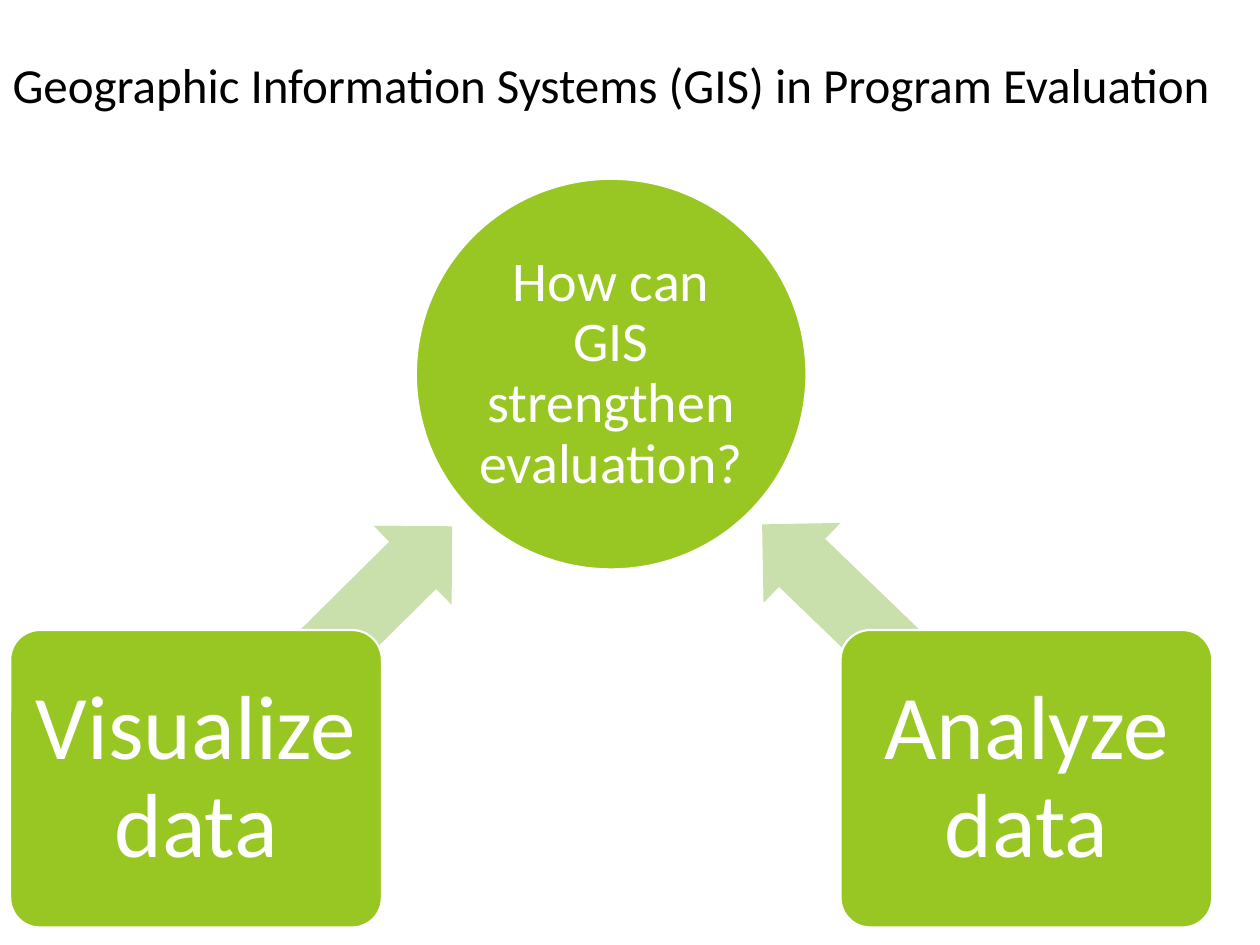
from dataclasses import dataclass

from pptx import Presentation
from pptx.dml.color import RGBColor
from pptx.enum.shapes import MSO_SHAPE
from pptx.enum.text import MSO_ANCHOR, MSO_AUTO_SIZE, PP_ALIGN
from pptx.util import Pt

ELLIPSE, ROUNDED = MSO_SHAPE.OVAL, MSO_SHAPE.ROUNDED_RECTANGLE
ARROW = MSO_SHAPE.LEFT_ARROW
LEFT, CENTER = PP_ALIGN.LEFT, PP_ALIGN.CENTER
MIDDLE, NO_FIT = MSO_ANCHOR.MIDDLE, MSO_AUTO_SIZE.NONE
TITLE_ONLY = 5


@dataclass(frozen=True)
class Theme:
    font: str = "Calibri"
    black: RGBColor = RGBColor(0x00, 0x00, 0x00)
    white: RGBColor = RGBColor(0xFF, 0xFF, 0xFF)
    green: RGBColor = RGBColor(0x98, 0xC7, 0x23)
    pale_green: RGBColor = RGBColor(0xCA, 0xE0, 0xAC)
    title_size: int = 28
    question_size: int = 32
    answer_size: int = 52
    outline: float = 1.25


THEME = Theme()


def set_text(sp, text, *, size, color, align=CENTER, spacing=None, inset=None):
    """Fill the shape's text frame with one formatted paragraph."""
    tf = sp.text_frame
    tf.word_wrap = True
    tf.auto_size = NO_FIT
    tf.vertical_anchor = MIDDLE
    if inset is not None:
        tf.margin_left = tf.margin_right = Pt(inset)
        tf.margin_top = tf.margin_bottom = Pt(inset)
    p = tf.paragraphs[0]
    p.alignment = align
    p.line_spacing = spacing
    r = p.add_run()
    r.text = text
    r.font.name = THEME.font
    r.font.size = Pt(size)
    r.font.color.rgb = color


def add_filled(s, kind, box, fill):
    sp = s.shapes.add_shape(kind, *map(Pt, box))
    sp.shadow.inherit = False
    sp.fill.solid()
    sp.fill.fore_color.rgb = fill
    sp.line.fill.background()
    return sp


def add_title(s, box, text):
    sp = s.shapes.title
    sp.left, sp.top, sp.width, sp.height = map(Pt, box)
    set_text(sp, text, size=THEME.title_size, color=THEME.black, align=LEFT)


def add_node(s, kind, box, text, *, size, inset):
    """Green outlined shape with white centred text."""
    sp = add_filled(s, kind, box, THEME.green)
    sp.line.color.rgb = THEME.white
    sp.line.width = Pt(THEME.outline)
    if kind == ROUNDED:
        sp.adjustments[0] = 0.1
    set_text(sp, text, size=size, color=THEME.white, spacing=0.9, inset=inset)


def add_arrow(s, box, angle):
    sp = add_filled(s, ARROW, box, THEME.pale_green)
    sp.adjustments[0], sp.adjustments[1] = 0.6, 0.5
    sp.rotation = angle


def add_diagram(s, box):
    """Question circle at top centre, answers in the bottom corners."""
    x, y, w, h = box
    circle = 223.2
    answer_w, answer_h = 212.4, 170
    add_node(s, ELLIPSE, (x + (w - circle) / 2, y, circle, circle),
             "How can GIS strengthen evaluation?",
             size=THEME.question_size, inset=1.5)

    # Each answer covers the tail of its arrow
    answers = [
        ("Visualize data", x, (x + 77, y + 239, 205.2, 63.4), 135.3),
        ("Analyze data", x + w - answer_w, (x + 400.4, y + 238.4, 209.5, 63.4), 43.9),
    ]
    for text, left, arrow_box, angle in answers:
        add_arrow(s, arrow_box, angle)
        add_node(s, ROUNDED, (left, y + h - answer_h, answer_w, answer_h),
                 text, size=THEME.answer_size, inset=8)


def main():
    prs = Presentation()
    prs.slide_width, prs.slide_height = Pt(720), Pt(540)
    s = prs.slides.add_slide(prs.slide_layouts[TITLE_ONLY])
    add_diagram(s, (5.8, 102.2, 686.9, 427.8))
    add_title(s, (0, 0, 720, 96),
              "Geographic Information Systems (GIS) in Program Evaluation")
    prs.save("out.pptx")


if __name__ == "__main__":
    main()
